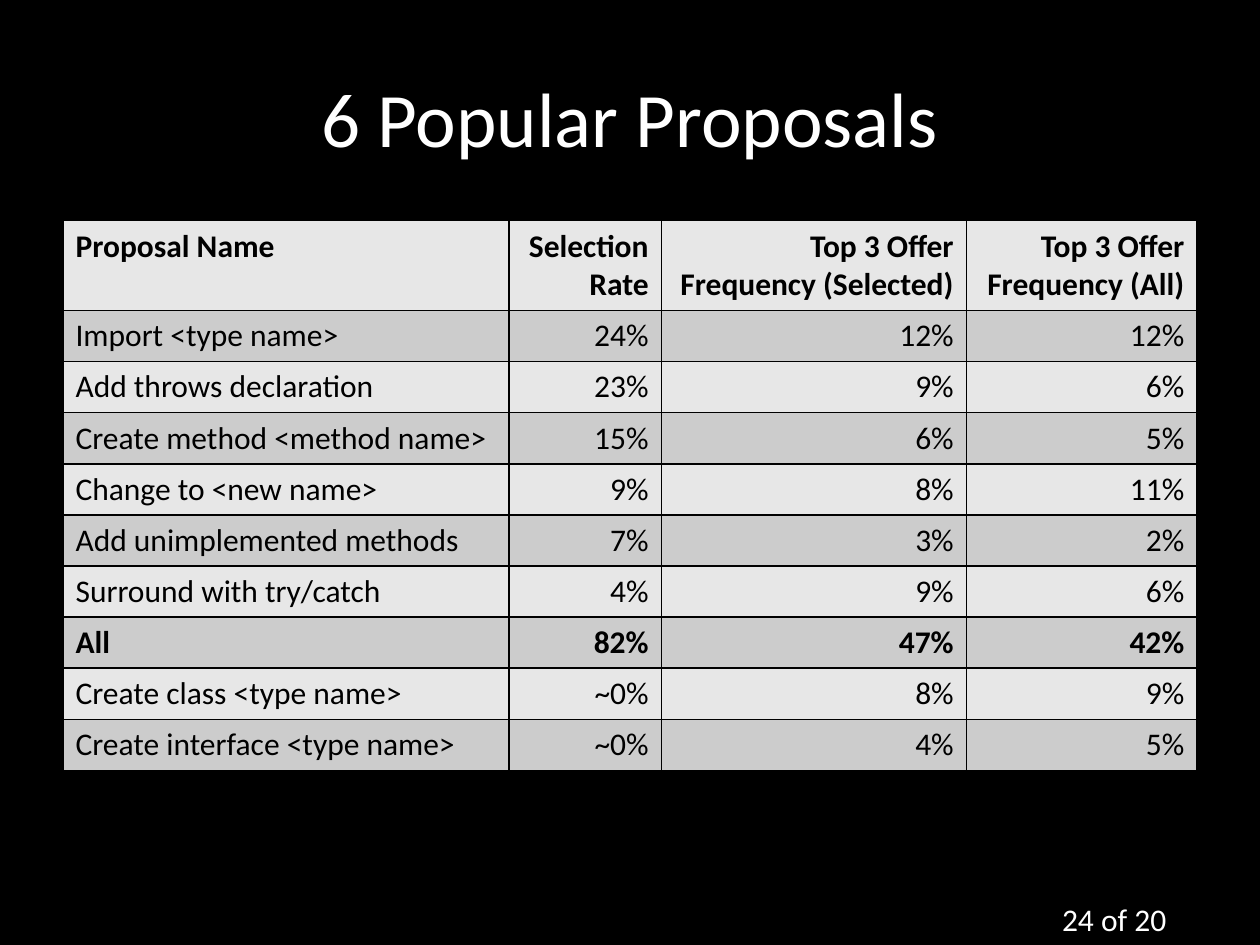
from dataclasses import dataclass

from lxml import etree
from pptx import Presentation
from pptx import util as u
from pptx.dml.color import RGBColor
from pptx.enum import text
from pptx.oxml import ns


@dataclass(frozen=True)
class Theme:
    back: str = "000000"
    light: str = "FFFFFF"
    ink: str = "000000"
    bands: tuple = ("E7E7E7", "CCCCCC")
    font: str = "Calibri"
    head: int = 44
    body: int = 18


THEME = Theme()
ALIGN = text.PP_ALIGN
WIDTHS = (8.99, 3.07, 6.15, 4.65)
HEIGHT = 1.03
TOP = 1.81
ROWS = (
    ("Proposal Name", "Selection Rate", "Top 3 Offer Frequency (Selected)",
     "Top 3 Offer Frequency (All)"),
    ("Import <type name>", "24%", "12%", "12%"),
    ("Add throws declaration", "23%", "9%", "6%"),
    ("Create method <method name>", "15%", "6%", "5%"),
    ("Change to <new name>", "9%", "8%", "11%"),
    ("Add unimplemented methods", "7%", "3%", "2%"),
    ("Surround with try/catch", "4%", "9%", "6%"),
    ("All", "82%", "47%", "42%"),
    ("Create class <type name>", "~0%", "8%", "9%"),
    ("Create interface <type name>", "~0%", "4%", "5%"),
)
STRONG = ("Proposal Name", "All")


def paint(fill, color):
    fill.solid()
    fill.fore_color.rgb = RGBColor.from_string(color)


def write(frame, words, size, color, align=ALIGN.LEFT, bold=False):
    """Put one styled paragraph in a text frame."""
    para = frame.paragraphs[0]
    para.alignment = align
    run = para.add_run()
    run.text = words
    form = {"name": THEME.font, "size": u.Pt(size), "bold": bold}
    for key, value in form.items():
        setattr(run.font, key, value)
    run.font.color.rgb = RGBColor.from_string(color)


def border(cell, color, width=1):
    """Draw a solid line on all four sides of a cell."""
    props = cell._tc.get_or_add_tcPr()
    for side in ("lnL", "lnR", "lnT", "lnB"):
        line = etree.SubElement(props, ns.qn(f"a:{side}"), w=str(u.Pt(width)))
        fill = etree.SubElement(line, ns.qn("a:solidFill"))
        etree.SubElement(fill, ns.qn("a:srgbClr"), val=color)


def add_text(slide, box, words, size, align, anchor):
    frame = slide.shapes.add_textbox(*map(u.Cm, box)).text_frame
    form = {"word_wrap": True, "vertical_anchor": anchor}
    for key, value in form.items():
        setattr(frame, key, value)
    write(frame, words, size, THEME.light, align)


def add_grid(slide, box):
    table = slide.shapes.add_table(
        len(ROWS), len(WIDTHS), *map(u.Cm, box)).table
    for col, width in zip(table.columns, WIDTHS):
        col.width = u.Cm(width)
    for r, row in enumerate(ROWS):
        table.rows[r].height = u.Cm(HEIGHT if r else TOP)
        for c, words in enumerate(row):
            cell = table.cell(r, c)
            border(cell, THEME.ink)
            paint(cell.fill, THEME.bands[r % 2])
            write(cell.text_frame, words, THEME.body, THEME.ink,
                  ALIGN.RIGHT if c else ALIGN.LEFT, row[0] in STRONG)


def main():
    deck = Presentation()
    deck.slide_width, deck.slide_height = u.Cm(25.4), u.Cm(19.05)
    slide = deck.slides.add_slide(deck.slide_layouts[6])
    paint(slide.background.fill, THEME.back)

    # Page number, title, table
    add_text(slide, (21.16, 18.01, 2.97, 1.02), "24 of 20", THEME.body,
             ALIGN.LEFT, text.MSO_ANCHOR.TOP)
    add_text(slide, (1.27, 0.76, 22.86, 3.18), "6 Popular Proposals",
             THEME.head, ALIGN.CENTER, text.MSO_ANCHOR.MIDDLE)
    high = TOP + HEIGHT * (len(ROWS) - 1)
    add_grid(slide, (1.27, 4.45, sum(WIDTHS), high))

    deck.save("out.pptx")


if __name__ == "__main__":
    main()
